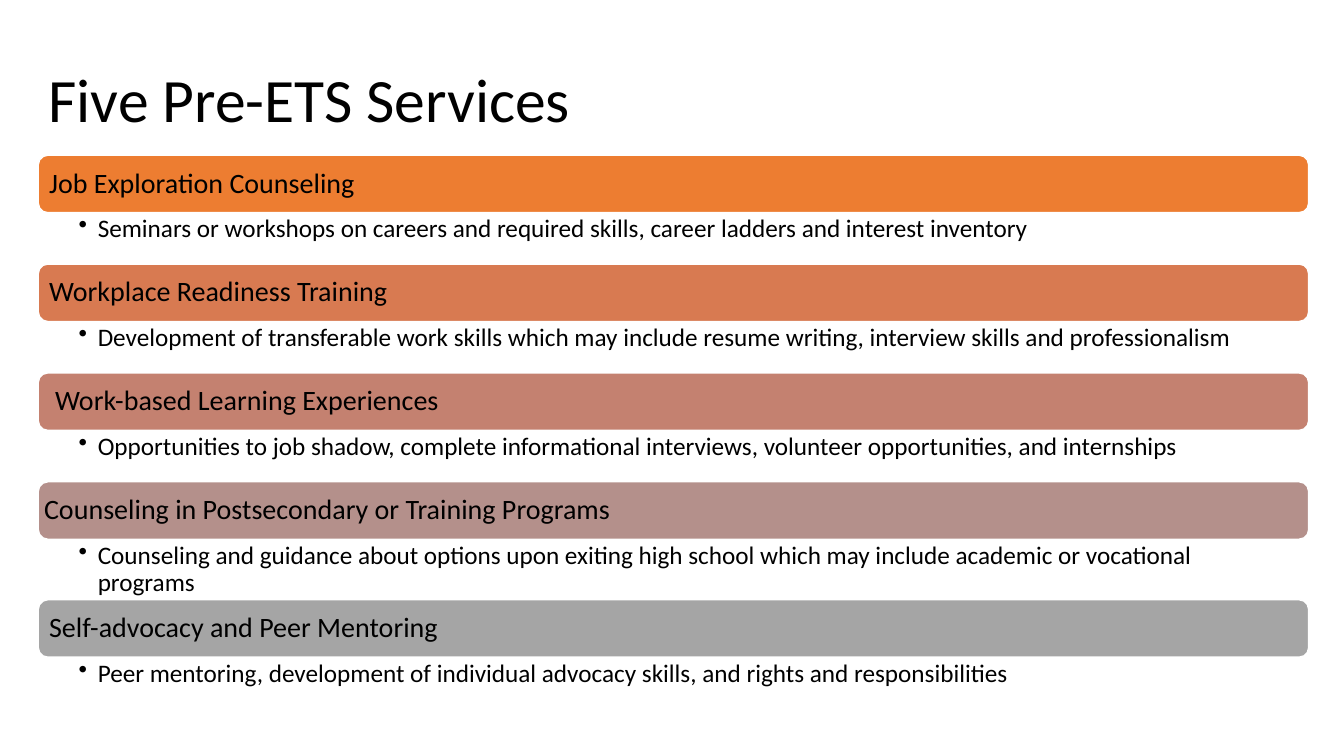
import pptx
import pptx.dml.color
import pptx.enum.shapes
import pptx.enum.text
import pptx.oxml
import pptx.util
from pptx.dml.color import RGBColor
from pptx.util import Inches

BLACK = RGBColor(0x00, 0x00, 0x00)
WHITE = RGBColor(0xFF, 0xFF, 0xFF)
ORANGE = RGBColor(0xED, 0x7D, 0x31)
RUST = RGBColor(0xD8, 0x7A, 0x51)
ROSE = RGBColor(0xC4, 0x81, 0x70)
MAUVE = RGBColor(0xB4, 0x90, 0x8B)
GRAY = RGBColor(0xA5, 0xA5, 0xA5)

LEFT, TOP, WIDTH = 0.38, 1.54, 12.6
BAR_HEIGHT = 0.57

# Heading, heading inset, detail, detail height, bar colour
SERVICES = [
    ("Job Exploration Counseling", 0.08,
     "Seminars or workshops on careers and required skills, career ladders "
     "and interest inventory", 0.51, ORANGE),
    ("Workplace Readiness Training", 0.08,
     "Development of transferable work skills which may include resume "
     "writing, interview skills and professionalism", 0.51, RUST),
    ("Work-based Learning Experiences", 0.14,
     "Opportunities to job shadow, complete informational interviews, "
     "volunteer opportunities, and internships", 0.51, ROSE),
    ("Counseling in Postsecondary or Training Programs", 0.03,
     "Counseling and guidance about options upon exiting high school which "
     "may include academic or vocational programs", 0.6, MAUVE),
    ("Self-advocacy and Peer Mentoring", 0.08,
     "Peer mentoring, development of individual advocacy skills, and rights "
     "and responsibilities", 0.51, GRAY),
]


def write_text(frame, text, size, anchor, margins):
    """Fill a text frame with one left-aligned paragraph and return it."""
    frame.word_wrap = True
    frame.auto_size = pptx.enum.text.MSO_AUTO_SIZE.NONE
    frame.vertical_anchor = anchor
    (frame.margin_left, frame.margin_top,
     frame.margin_right, frame.margin_bottom) = map(Inches, margins)
    para = frame.paragraphs[0]
    para.text = text
    para.alignment = pptx.enum.text.PP_ALIGN.LEFT
    para.line_spacing = 0.9
    para.font.name = "Calibri"
    para.font.size = pptx.util.Pt(size)
    para.font.color.rgb = BLACK
    return para


def add_bullet(para, indent):
    properties = para._p.get_or_add_pPr()
    properties.set("marL", str(Inches(indent)))
    properties.set("indent", str(-Inches(indent)))
    bullet = pptx.oxml.parse_xml(
        '<a:buChar xmlns:a="http://schemas.openxmlformats.org/drawingml/2006/main"'
        ' char="•"/>')
    properties.insert_element_before(bullet, "a:tabLst", "a:defRPr", "a:extLst")


def add_title(page, text):
    title = page.shapes.title
    title.left, title.top = Inches(LEFT), Inches(0.19)
    title.width, title.height = Inches(12.04), Inches(1.66)
    write_text(title.text_frame, text, 44, pptx.enum.text.MSO_ANCHOR.MIDDLE,
               (0.1, 0.05, 0.1, 0.05))


def add_heading_bar(page, top, text, inset, color):
    bar = page.shapes.add_shape(
        pptx.enum.shapes.MSO_SHAPE.ROUNDED_RECTANGLE,
        Inches(LEFT), Inches(top), Inches(WIDTH), Inches(BAR_HEIGHT))
    bar.shadow.inherit = False
    bar.fill.solid()
    bar.fill.fore_color.rgb = color
    bar.line.color.rgb = WHITE
    bar.line.width = pptx.util.Pt(1)
    write_text(bar.text_frame, text, 20, pptx.enum.text.MSO_ANCHOR.MIDDLE,
               (inset, 0.08, 0.08, 0.08))


def add_detail(page, top, text, height):
    box = page.shapes.add_textbox(
        Inches(LEFT), Inches(top), Inches(WIDTH), Inches(height))
    para = write_text(box.text_frame, text, 18, pptx.enum.text.MSO_ANCHOR.TOP,
                      (0.4, 0.03, 0.14, 0.03))
    add_bullet(para, 0.19)


def main():
    deck = pptx.Presentation()
    deck.slide_width, deck.slide_height = Inches(13.33), Inches(7.5)
    page = deck.slides.add_slide(deck.slide_layouts.get_by_name("Title Only"))
    add_title(page, "Five Pre-ETS Services")

    # Stack each heading bar directly above its detail
    top = TOP
    for heading, inset, detail, height, color in SERVICES:
        add_heading_bar(page, top, heading, inset, color)
        add_detail(page, top + BAR_HEIGHT, detail, height)
        top += BAR_HEIGHT + height

    deck.save("out.pptx")


if __name__ == "__main__":
    main()
